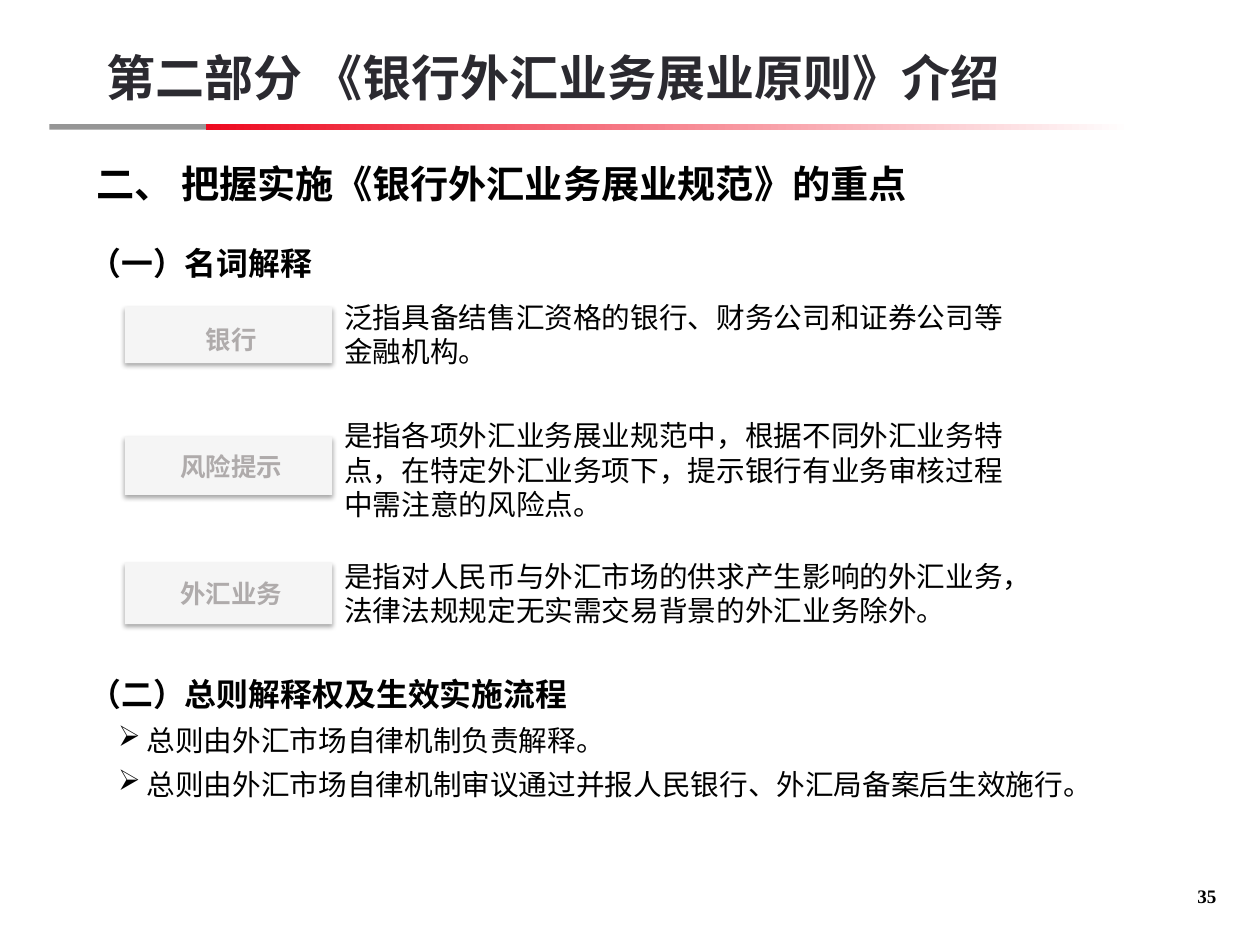
from lxml import etree
from pptx import Presentation
from pptx import util as u
from pptx.dml.color import RGBColor
from pptx.enum import shapes, text
from pptx.oxml import ns, parse_xml

CJK = "Noto Sans CJK SC"
SERIF = "Times New Roman"
BLACK = "000000"


def color(value):
    return RGBColor.from_string(value)


class SlideBuilder:
    """Holds the style and the current slide."""

    def __init__(self, page):
        self.page = page

    def span(self, para, words, size, bold=False, font=CJK, ink=BLACK):
        run = para.add_run()
        run.text = words
        run.font.size = u.Pt(size)
        run.font.bold = bold
        run.font.name = font
        run.font.color.rgb = color(ink)
        east = etree.SubElement(run.font._element, ns.qn("a:ea"))
        east.set("typeface", font if font.startswith("Noto") else CJK)

    def frame(self, box, inset=(0, 0), anchor=text.MSO_ANCHOR.TOP, wrap=True):
        frame = box.text_frame
        frame.auto_size = text.MSO_AUTO_SIZE.NONE
        frame.word_wrap = wrap
        frame.vertical_anchor = anchor
        frame.margin_left = frame.margin_right = u.Pt(inset[0])
        frame.margin_top = frame.margin_bottom = u.Pt(inset[1])
        return frame

    def text_box(self, left, top, width, height, **style):
        box = self.page.shapes.add_textbox(*map(u.Pt, (left, top, width, height)))
        return self.frame(box, **style)

    def title(self, words, left, top, width, height):
        box = self.page.shapes.title
        box.left, box.top, box.width, box.height = map(u.Pt, (left, top, width, height))
        para = self.frame(box, anchor=text.MSO_ANCHOR.BOTTOM).paragraphs[0]
        para.alignment = text.PP_ALIGN.LEFT
        para.line_spacing = 0.85
        self.span(para, words, 24, bold=True, font=SERIF)

    def bar(self, left, top, width, height, fill, fade_to=None):
        box = self.page.shapes.add_shape(
            shapes.MSO_SHAPE.RECTANGLE, *map(u.Pt, (left, top, width, height)))
        box.shadow.inherit = False
        box.line.fill.background()
        if fade_to:
            box.fill.gradient()
            box.fill.gradient_angle = 0
            for stop, shade in zip(box.fill.gradient_stops, (fill, fade_to)):
                stop.color.rgb = color(shade)
        else:
            box.fill.solid()
            box.fill.fore_color.rgb = color(fill)
        return box

    def card(self, left, top, width, height):
        box = self.bar(left, top, width, height, "F5F5F5")
        effects = box._element.spPr.find(ns.qn("a:effectLst"))
        effects.append(parse_xml(
            f'<a:outerShdw {ns.nsdecls("a")} blurRad="{u.Pt(3.1)}" dist="{u.Pt(1.8)}" '
            'dir="5400000" rotWithShape="0"><a:srgbClr val="000000">'
            '<a:alpha val="35000"/></a:srgbClr></a:outerShdw>'))

    def bullet(self, frame, words):
        para = frame.add_paragraph()
        props = para._p.get_or_add_pPr()
        props.set("marL", str(u.Pt(36)))
        props.set("indent", str(-u.Pt(18)))
        etree.SubElement(props, ns.qn("a:buChar")).set("char", "➢")
        para.space_before = u.Pt(6.3)
        self.span(para, words, 18)


def main():
    deck = Presentation()
    deck.slide_width, deck.slide_height = u.Pt(792), u.Pt(594)
    page = deck.slides.add_slide(deck.slide_layouts[5])
    builder = SlideBuilder(page)

    # Two-part rule under the section name
    builder.bar(31, 78, 98.5, 3.5, "969696")
    builder.bar(129.5, 78, 582, 3.5, "EE0A20", fade_to="FFFFFF")

    # Section name, slide title and page number
    bottom = text.MSO_ANCHOR.BOTTOM
    para = builder.text_box(60.5, 13, 681, 54, anchor=bottom).paragraphs[0]
    builder.span(para, " ", 28, bold=True, font="Noto Sans CJK KR")
    builder.span(para, "第二部分 《银行外汇业务展业原则》介绍", 30.8, bold=True, ink="2B2A30")
    builder.title("二、 把握实施《银行外汇业务展业规范》的重点", 60.5, 75.6, 681, 54)
    para = builder.text_box(732.2, 540, 32.4, 30.2, anchor=bottom, wrap=False).paragraphs[0]
    para.alignment = text.PP_ALIGN.RIGHT
    builder.span(para, "35", 12, bold=True, font=SERIF)

    # Terms: card top and height, label top, meaning top and height
    para = builder.text_box(56.2, 153.4, 679, 29).paragraphs[0]
    builder.span(para, "（一）名词解释", 20, bold=True)
    terms = [
        ("银行", 193, 35.3, 200.2, 185, 51,
         "泛指具备结售汇资格的银行、财务公司和证券公司等金融机构。"),
        ("风险提示", 274.3, 36.7, 280.1, 259.2, 72.7,
         "是指各项外汇业务展业规范中，根据不同外汇业务特点，在特定外汇业务项下，"
         "提示银行有业务审核过程中需注意的风险点。"),
        ("外汇业务", 353.5, 38.9, 360, 347.8, 51,
         "是指对人民币与外汇市场的供求产生影响的外汇业务，"
         "法律法规规定无实需交易背景的外汇业务除外。"),
    ]
    inset = (7.2, 3.6)
    for term, top, height, label_top, meaning_top, meaning_height, meaning in terms:
        builder.card(78.5, top, 130.3, height)
        para = builder.text_box(82, label_top, 126.7, 26.6, inset=inset).paragraphs[0]
        para.alignment = text.PP_ALIGN.CENTER
        builder.span(para, term, 16, bold=True, font="Arial", ink="AFABAB")
        para = builder.text_box(209.3, meaning_top, 435.8, meaning_height,
                                inset=inset).paragraphs[0]
        builder.span(para, meaning, 18)

    # Interpretation and entry into force
    frame = builder.text_box(56.2, 423.8, 679, 84)
    builder.span(frame.paragraphs[0], "（二）总则解释权及生效实施流程", 20, bold=True)
    builder.bullet(frame, "总则由外汇市场自律机制负责解释。")
    builder.bullet(frame, "总则由外汇市场自律机制审议通过并报人民银行、外汇局备案后生效施行。")

    deck.save("out.pptx")


if __name__ == "__main__":
    main()
